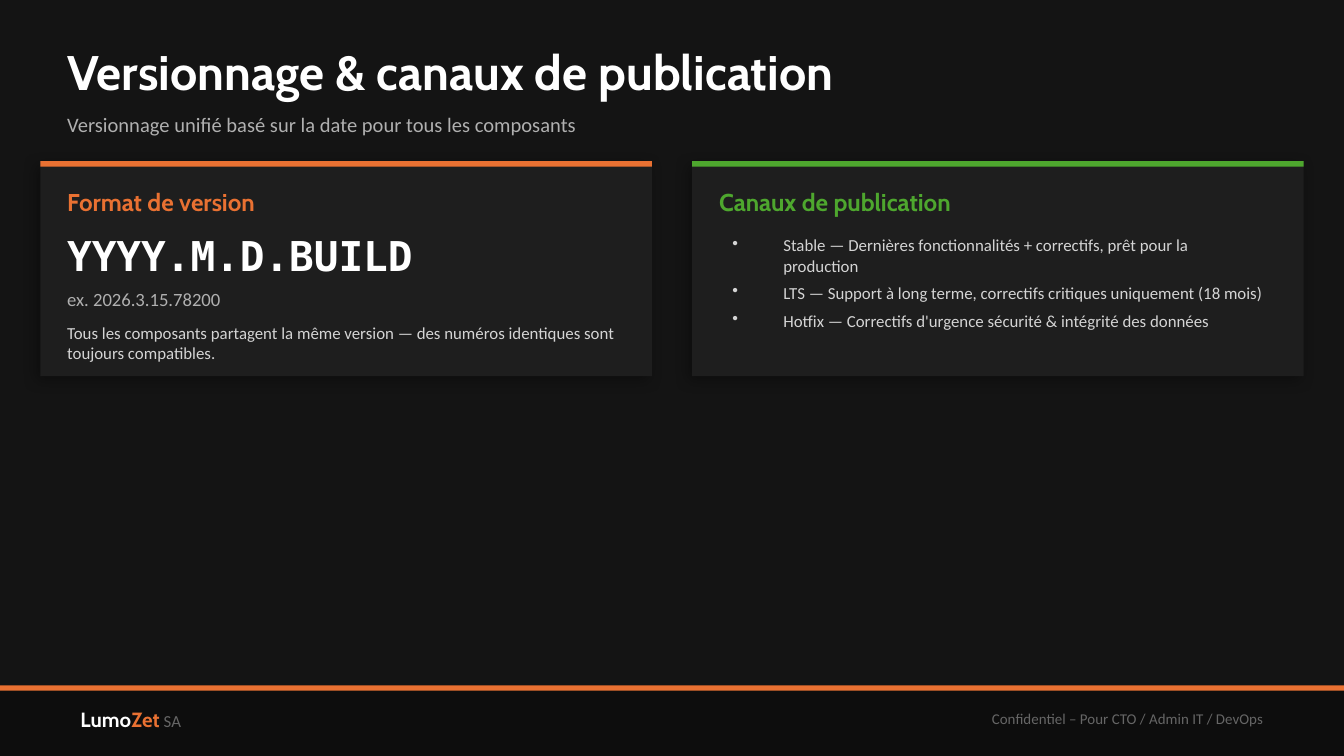
from lxml import etree
from pptx import Presentation
from pptx import util as u
from pptx.dml.color import RGBColor
from pptx.enum import shapes, text
from pptx.oxml.ns import qn

THEME = {
    "page": "141414", "footer": "0D0D0D", "card": "1E1E1E", "shadow": "000000",
    "orange": "E97132", "green": "4EA72E", "white": "FFFFFF",
    "body": "D4D4D4", "muted": "B0B0B0", "faint": "666666",
    # style: font, size, bold
    "title": ("Cabin", 26, True), "subtitle": ("Calibri", 11, False),
    "heading": ("Cabin", 13, True), "code": ("DejaVu Sans Mono", 22, True),
    "example": ("Calibri", 10, False), "text": ("Calibri", 9, False),
    "brand": ("Cabin", 11, True), "note": ("Calibri", 8, False),
}

# A run is (wording, style, colour); rows are counted in grid cells.
HEADER = [
    (5, 11, ("Versionnage & canaux de publication", "title", "white")),
    (15, 7, ("Versionnage unifié basé sur la date pour tous les composants",
             "subtitle", "muted")),
]
FOOTER_BRAND = [("Lumo", "brand", "white"), ("Zet", "brand", "orange"),
                (" SA", "text", "faint")]
FOOTER_NOTE = [("Confidentiel – Pour CTO / Admin IT / DevOps", "note", "faint")]
CARDS = [
    {"heading": "Format de version", "accent": "orange",
     "lines": [
         (34, 8, ("YYYY.M.D.BUILD", "code", "white")),
         (42, 5, ("ex. 2026.3.15.78200", "example", "muted")),
         (48, 6, ("Tous les composants partagent la même version — des numéros "
                  "identiques sont toujours compatibles.", "text", "body")),
     ]},
    {"heading": "Canaux de publication", "accent": "green",
     "bullets": [
         "Stable — Dernières fonctionnalités + correctifs, prêt pour la production",
         "LTS — Support à long terme, correctifs critiques uniquement (18 mois)",
         "Hotfix — Correctifs d'urgence sécurité & intégrité des données",
     ]},
]

COLUMNS, ROWS = 200, 112.5
MARGIN, RULE = 10, 0.8
FOOTER_TOP = 102
CARD_LEFT, CARD_TOP, CARD_WIDTH, CARD_HEIGHT, CARD_GAP = 6, 24, 91, 32, 6
CARD_PADDING = 4

presentation = Presentation()
presentation.slide_width = u.Inches(10)
presentation.slide_height = presentation.slide_width * 9 // 16
CELL = presentation.slide_width / COLUMNS
slide = presentation.slides.add_slide(presentation.slide_layouts[6])


def color(name):
    return RGBColor.from_string(THEME[name])


def place(left, top, width, height):
    """Turn grid cells into slide lengths."""
    return [u.Emu(round(cells * CELL)) for cells in (left, top, width, height)]


def add_block(area, fill):
    shape = slide.shapes.add_shape(shapes.MSO_SHAPE.RECTANGLE, *place(*area))
    shape.shadow.inherit = False
    shape.fill.solid()
    shape.fill.fore_color.rgb = color(fill)
    shape.line.fill.background()
    return shape


def cast_shadow(shape):
    effects = shape._element.spPr.find(qn("a:effectLst"))
    shadow = etree.SubElement(effects, qn("a:outerShdw"), blurRad=str(u.Pt(8)),
                              dist=str(u.Pt(3)), dir=str(135 * 60000),
                              algn="bl", rotWithShape="0")
    tint = etree.SubElement(shadow, qn("a:srgbClr"), val=THEME["shadow"])
    etree.SubElement(tint, qn("a:alpha"), val="35000")


def add_runs(paragraph, runs):
    for wording, style, tint in runs:
        run = paragraph.add_run()
        run.text = wording
        run.font.name, size, run.font.bold = THEME[style]
        run.font.size = u.Pt(size)
        run.font.color.rgb = color(tint)


def add_text(area, runs=(), inset=False, align=text.PP_ALIGN.LEFT):
    frame = slide.shapes.add_textbox(*place(*area)).text_frame
    frame.word_wrap = True
    frame.vertical_anchor = text.MSO_ANCHOR.MIDDLE
    if not inset:
        frame.margin_left = frame.margin_right = 0
        frame.margin_top = frame.margin_bottom = 0
    frame.paragraphs[0].alignment = align
    add_runs(frame.paragraphs[0], runs)
    return frame


def add_bullets(area, items):
    frame = add_text(area, inset=True)
    frame.vertical_anchor = text.MSO_ANCHOR.TOP
    indent = u.Inches(0.38)
    for index, item in enumerate(items):
        paragraph = frame.add_paragraph() if index else frame.paragraphs[0]
        paragraph.space_after = u.Pt(4)
        properties = paragraph._p.get_or_add_pPr()
        properties.set("marL", str(indent))
        properties.set("indent", str(-indent))
        etree.SubElement(properties, qn("a:buChar"), char="•")
        add_runs(paragraph, [(item, "text", "body")])


def add_card(index, card):
    left = CARD_LEFT + index * (CARD_WIDTH + CARD_GAP)
    inner_left, inner_width = left + CARD_PADDING, CARD_WIDTH - 2 * CARD_PADDING
    cast_shadow(add_block((left, CARD_TOP, CARD_WIDTH, CARD_HEIGHT), "card"))
    add_block((left, CARD_TOP, CARD_WIDTH, RULE), card["accent"])
    heading = (27, 6, (card["heading"], "heading", card["accent"]))
    for top, height, run in [heading, *card.get("lines", [])]:
        add_text((inner_left, top, inner_width, height), [run])
    if "bullets" in card:
        add_bullets((inner_left, 34, inner_width, 20), card["bullets"])


slide.background.fill.solid()
slide.background.fill.fore_color.rgb = color("page")

add_block((0, FOOTER_TOP, COLUMNS, ROWS - FOOTER_TOP), "footer")
add_block((0, FOOTER_TOP, COLUMNS, RULE), "orange")
add_text((MARGIN, FOOTER_TOP + 1, 60, 8), FOOTER_BRAND, inset=True)
add_text((COLUMNS - MARGIN - 80, FOOTER_TOP + 1, 80, 8), FOOTER_NOTE,
         inset=True, align=text.PP_ALIGN.RIGHT)

for top, height, run in HEADER:
    add_text((MARGIN, top, COLUMNS - 2 * MARGIN, height), [run])
for index, card in enumerate(CARDS):
    add_card(index, card)

presentation.save("out.pptx")
